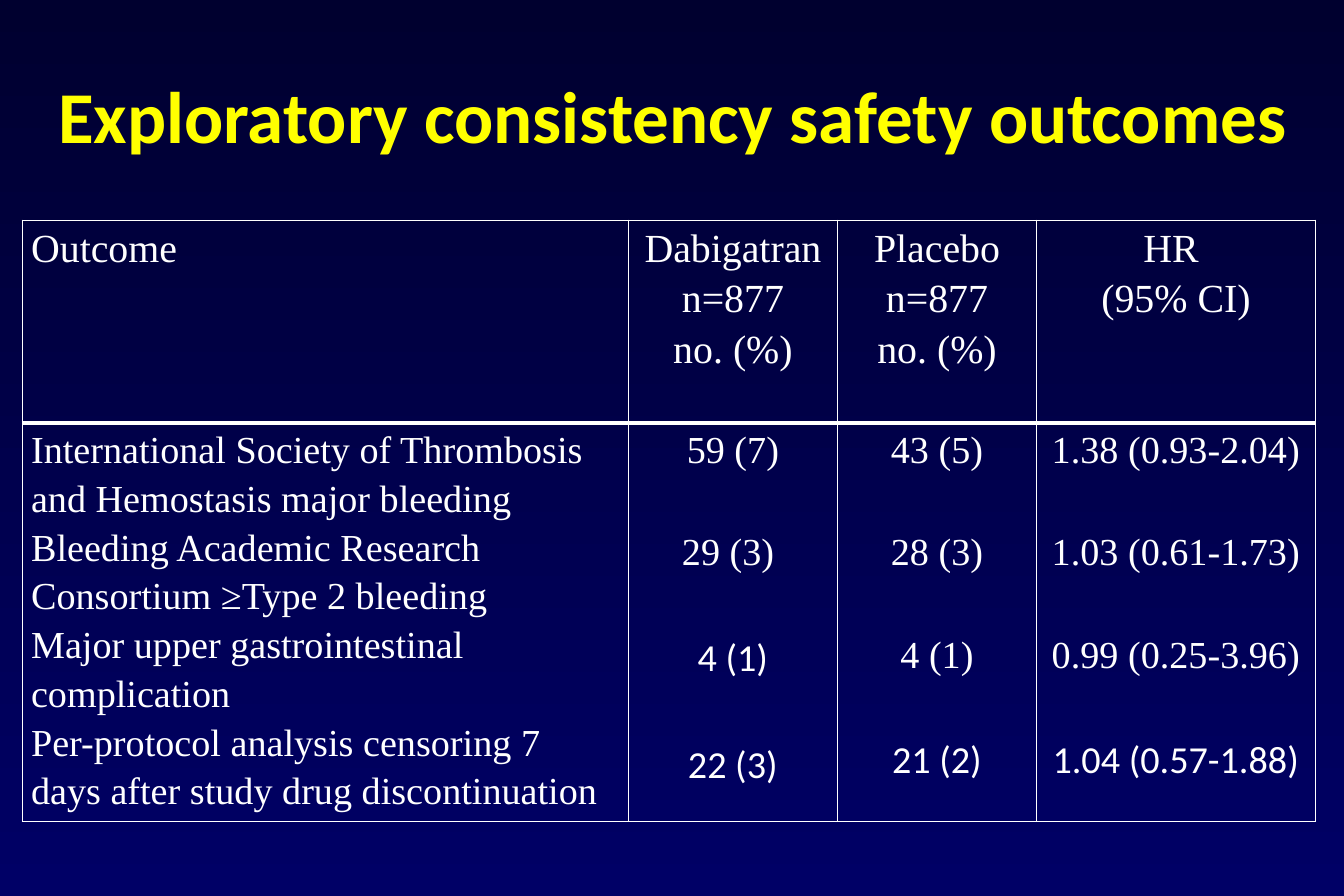
import pptx
import pptx.dml.color
import pptx.enum.text
import pptx.oxml.ns
import pptx.util
from lxml import etree

PX = 9525  # EMU per pixel, 96 px to the inch
SERIF, SANS = "Times New Roman", "Calibri"
WHITE, YELLOW = "FFFFFF", "FFFF00"
ALIGN = pptx.enum.text.PP_ALIGN
ANCHOR = pptx.enum.text.MSO_ANCHOR

COLUMN_WIDTHS = [487, 168, 160, 224]
ROW_HEIGHTS = [163, 320]
HEADINGS = [
    ["Outcome"],
    ["Dabigatran", "n=877", "no. (%)"],
    ["Placebo", "n=877", "no. (%)"],
    ["HR ", "(95% CI)"],
]
RESULTS = [
    [
        "International Society of Thrombosis and Hemostasis major bleeding",
        "Bleeding Academic Research Consortium ≥Type 2 bleeding",
        "Major upper gastrointestinal complication",
        "Per-protocol analysis censoring 7 days after study drug discontinuation",
    ],
    ["59 (7)", "29 (3) ", "4 (1)", "22 (3)"],
    ["43 (5)", "28 (3)", "4 (1)", "21 (2)"],
    ["1.38 (0.93-2.04)", "1.03 (0.61-1.73)", "0.99 (0.25-3.96)", "1.04 (0.57-1.88)"],
]
# How many of the last values in each column are set in the sans font
SANS_COUNTS = [0, 2, 1, 1]


def px(length):
    return pptx.util.Emu(length * PX)


def color(value):
    return pptx.dml.color.RGBColor.from_string(value)


def add_span(para, text, font, size, fill, bold=False):
    span = para.add_run()
    span.text = text
    span.font.name = font
    span.font.size = pptx.util.Pt(size)
    span.font.bold = bold
    span.font.color.rgb = color(fill)


def paint_background(page):
    fill = page.background.fill
    fill.gradient()
    fill.gradient_angle = 270
    for stop, value in zip(fill.gradient_stops, ["00002F", "000066"]):
        stop.color.rgb = color(value)


def set_title(page, text):
    title = page.shapes.title
    title.left, title.top, title.width, title.height = map(px, (13, 32, 1056, 120))
    frame = title.text_frame
    frame.vertical_anchor = ANCHOR.MIDDLE
    para = frame.paragraphs[0]
    para.alignment = ALIGN.CENTER
    add_span(para, text, SANS, 44, YELLOW, bold=True)


def set_border(cell, side, points):
    properties = cell._tc.get_or_add_tcPr()
    tag = pptx.oxml.ns.qn
    line = etree.SubElement(properties, tag("a:ln" + side), w=str(pptx.util.Pt(points)))
    fill = etree.SubElement(line, tag("a:solidFill"))
    etree.SubElement(fill, tag("a:srgbClr"), val=WHITE)


def fill_cell(cell, lines, fonts, size, alignment, gap=0):
    cell.margin_left = cell.margin_right = px(7)
    cell.margin_top = cell.margin_bottom = 0
    cell.vertical_anchor = ANCHOR.TOP
    frame = cell.text_frame
    for index, (text, font) in enumerate(zip(lines, fonts)):
        para = frame.add_paragraph() if index else frame.paragraphs[0]
        para.alignment = alignment
        para.line_spacing = 1.15
        para.space_before = pptx.util.Pt(gap if index else 0)
        add_span(para, text, font, size, WHITE)


def add_outcome_table(page):
    frame = page.shapes.add_table(
        len(ROW_HEIGHTS), len(COLUMN_WIDTHS), px(18), px(177),
        px(sum(COLUMN_WIDTHS)), px(sum(ROW_HEIGHTS)))
    table = frame.table
    table.first_row = table.horz_banding = False
    for row, height in zip(table.rows, ROW_HEIGHTS):
        row.height = px(height)

    for index, width in enumerate(COLUMN_WIDTHS):
        table.columns[index].width = px(width)
        heading, result = table.cell(0, index), table.cell(1, index)
        alignment = ALIGN.CENTER if index else ALIGN.LEFT

        # Text
        fill_cell(heading, HEADINGS[index], [SERIF] * len(HEADINGS[index]), 24, alignment)
        sans_count = SANS_COUNTS[index]
        fonts = [SERIF] * (len(RESULTS[index]) - sans_count) + [SANS] * sans_count
        fill_cell(result, RESULTS[index], fonts, 23, alignment, gap=32.3 if index else 0)

        # Rules, with a heavy one under the headings
        for cell, heavy_side in ((heading, "B"), (result, "T")):
            for side in "LRTB":
                set_border(cell, side, 3 if side == heavy_side else 1)
            cell.fill.background()


def main():
    deck = pptx.Presentation()
    deck.slide_width, deck.slide_height = px(1080), px(720)
    page = deck.slides.add_slide(deck.slide_layouts.get_by_name("Title Only"))
    paint_background(page)
    set_title(page, "Exploratory consistency safety outcomes")
    add_outcome_table(page)
    deck.save("out.pptx")


if __name__ == "__main__":
    main()
